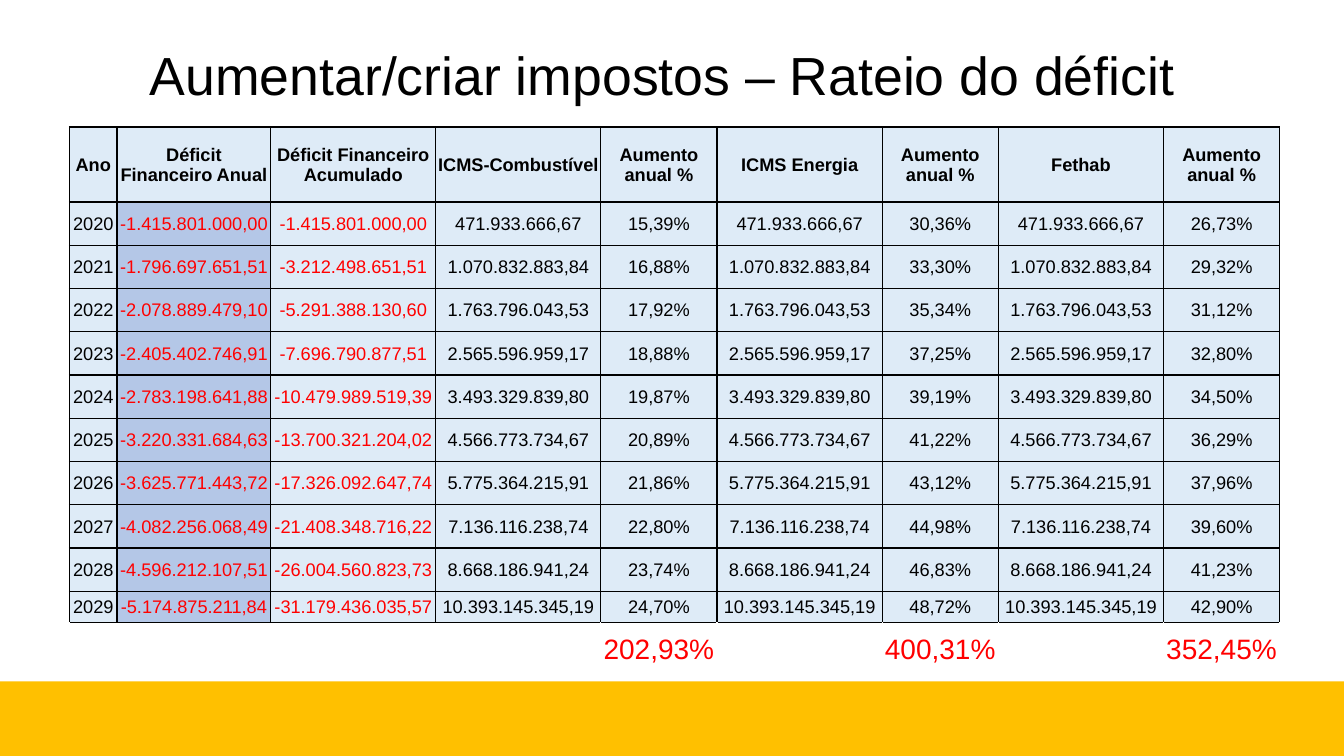
"""Build the slide that shares the deficit among three taxes."""
from typing import NamedTuple

from lxml.etree import SubElement
from pptx import Presentation
from pptx.dml.color import RGBColor
from pptx.enum.shapes import MSO_SHAPE
from pptx.enum.text import MSO_ANCHOR as Anchor, MSO_AUTO_SIZE as AutoSize, PP_ALIGN as Align
from pptx.oxml.ns import qn
from pptx.util import Cm, Pt

FONT = "Arial"
BLACK = RGBColor(0x00, 0x00, 0x00)
RED = RGBColor(0xFF, 0x00, 0x00)
WHITE = RGBColor(0xFF, 0xFF, 0xFF)
GOLD = RGBColor(0xFF, 0xC0, 0x00)
PALE_BLUE = RGBColor(0xDE, 0xEB, 0xF7)
MID_BLUE = RGBColor(0xB4, 0xC7, 0xE7)

PAGE_WIDTH, PAGE_HEIGHT, BAND_HEIGHT = 33.87, 19.05, 1.88
AMOUNT, PERCENT = 4.16, 2.93
COLUMN_WIDTHS = [1.2, 3.87, AMOUNT] + [AMOUNT, PERCENT] * 3
ROW_HEIGHTS = [1.89] + [1.09] * 9 + [0.79, 1.07]


class Year(NamedTuple):
    """Deficit of a year, the third borne by each tax and the rises needed."""
    year: str
    annual: str
    accumulated: str
    share: str
    fuel: str
    energy: str
    fethab: str

    def texts(self) -> list[str]:
        """Return the cells of the year from left to right."""
        return [self.year, self.annual, self.accumulated, self.share, self.fuel,
                self.share, self.energy, self.share, self.fethab]


class Look(NamedTuple):
    """Format of a table cell."""
    color: RGBColor = BLACK
    fill: RGBColor | None = PALE_BLUE
    size: int = 13
    bold: bool = False
    anchor: Anchor = Anchor.MIDDLE
    sides: tuple[str, ...] = ("a:lnL", "a:lnR", "a:lnT", "a:lnB")


RISE = "Aumento anual %"
HEADINGS = ["Ano", "Déficit Financeiro Anual", "Déficit Financeiro Acumulado",
            "ICMS-Combustível", RISE, "ICMS Energia", RISE, "Fethab", RISE]
YEARS = [
    Year("2020", "-1.415.801.000,00", "-1.415.801.000,00", "471.933.666,67", "15,39%", "30,36%", "26,73%"),
    Year("2021", "-1.796.697.651,51", "-3.212.498.651,51", "1.070.832.883,84", "16,88%", "33,30%", "29,32%"),
    Year("2022", "-2.078.889.479,10", "-5.291.388.130,60", "1.763.796.043,53", "17,92%", "35,34%", "31,12%"),
    Year("2023", "-2.405.402.746,91", "-7.696.790.877,51", "2.565.596.959,17", "18,88%", "37,25%", "32,80%"),
    Year("2024", "-2.783.198.641,88", "-10.479.989.519,39", "3.493.329.839,80", "19,87%", "39,19%", "34,50%"),
    Year("2025", "-3.220.331.684,63", "-13.700.321.204,02", "4.566.773.734,67", "20,89%", "41,22%", "36,29%"),
    Year("2026", "-3.625.771.443,72", "-17.326.092.647,74", "5.775.364.215,91", "21,86%", "43,12%", "37,96%"),
    Year("2027", "-4.082.256.068,49", "-21.408.348.716,22", "7.136.116.238,74", "22,80%", "44,98%", "39,60%"),
    Year("2028", "-4.596.212.107,51", "-26.004.560.823,73", "8.668.186.941,24", "23,74%", "46,83%", "41,23%"),
    Year("2029", "-5.174.875.211,84", "-31.179.436.035,57", "10.393.145.345,19", "24,70%", "48,72%", "42,90%"),
]
TOTALS = ["", "", "", "", "202,93%", "", "400,31%", "", "352,45%"]

HEADING = Look(bold=True)
FIGURE = Look()
ANNUAL = Look(color=RED, fill=MID_BLUE)
ACCUMULATED = Look(color=RED)
TOTAL = Look(color=RED, fill=WHITE, size=20, anchor=Anchor.BOTTOM, sides=("a:lnT",))
BLANK = TOTAL._replace(fill=None)


def add_span(para, text: str, size: int, color: RGBColor, bold: bool = False):
    """Add a centred run to a paragraph and return it."""
    para.alignment = Align.CENTER
    span = para.add_run()
    span.text = text
    span.font.name, span.font.size, span.font.bold = FONT, Pt(size), bold
    span.font.color.rgb = color
    return span


def add_title(page) -> None:
    """Place the title, raised as superscript."""
    title = page.shapes.title
    title.left, title.top, title.width, title.height = Cm(1.24), Cm(0.64), Cm(30.89), Cm(3.07)
    frame = title.text_frame
    frame.word_wrap = True
    frame.auto_size = AutoSize.SHAPE_TO_FIT_TEXT
    frame.vertical_anchor = Anchor.MIDDLE
    span = add_span(frame.paragraphs[0], "Aumentar/criar impostos – Rateio do déficit", 66, BLACK)
    span.font._element.set("baseline", "30000")


def add_band(page) -> None:
    """Draw the gold band along the foot."""
    band = page.shapes.add_shape(MSO_SHAPE.RECTANGLE, 0, Cm(PAGE_HEIGHT - BAND_HEIGHT),
                                 Cm(PAGE_WIDTH), Cm(BAND_HEIGHT))
    band.shadow.inherit = False
    band.fill.solid()
    band.fill.fore_color.rgb = GOLD
    band.line.fill.background()


def fill_cell(cell, text: str, look: Look) -> None:
    """Write and format one cell."""
    cell.margin_left = cell.margin_right = cell.margin_top = Cm(0.02)
    cell.margin_bottom = 0
    cell.vertical_anchor = look.anchor
    properties = cell._tc.get_or_add_tcPr()
    for side in look.sides:
        line = SubElement(properties, qn(side), w=str(Pt(1)))
        paint = SubElement(line, qn("a:solidFill"))
        SubElement(paint, qn("a:srgbClr"), val=str(BLACK))
    if look.fill is None:
        cell.fill.background()
    else:
        cell.fill.solid()
        cell.fill.fore_color.rgb = look.fill
    if text:
        add_span(cell.text_frame.paragraphs[0], text, look.size, look.color, look.bold)


def add_deficit_table(page) -> None:
    """Draw the table of yearly deficits, shares and rises."""
    table = page.shapes.add_table(len(ROW_HEIGHTS), len(COLUMN_WIDTHS), Cm(1.75), Cm(3.2),
                                  Cm(sum(COLUMN_WIDTHS)), Cm(sum(ROW_HEIGHTS))).table
    table.first_row = table.horz_banding = False
    for column, width in zip(table.columns, COLUMN_WIDTHS):
        column.width = Cm(width)
    for row, height in zip(table.rows, ROW_HEIGHTS):
        row.height = Cm(height)
    year_looks = [FIGURE, ANNUAL, ACCUMULATED] + [FIGURE] * 6
    lines = [(HEADINGS, [HEADING] * len(HEADINGS))]
    lines += [(year.texts(), year_looks) for year in YEARS]
    lines.append((TOTALS, [TOTAL if text else BLANK for text in TOTALS]))
    for row, (texts, looks) in zip(table.rows, lines):
        for cell, text, look in zip(row.cells, texts, looks):
            fill_cell(cell, text, look)
    last = len(ROW_HEIGHTS) - 1
    table.cell(last, 0).merge(table.cell(last, 3))


def main() -> None:
    """Build and save the deck."""
    deck = Presentation()
    deck.slide_width, deck.slide_height = Cm(PAGE_WIDTH), Cm(PAGE_HEIGHT)
    page = deck.slides.add_slide(deck.slide_layouts[5])
    add_band(page)
    add_title(page)
    add_deficit_table(page)
    deck.save("out.pptx")


if __name__ == "__main__":
    main()
